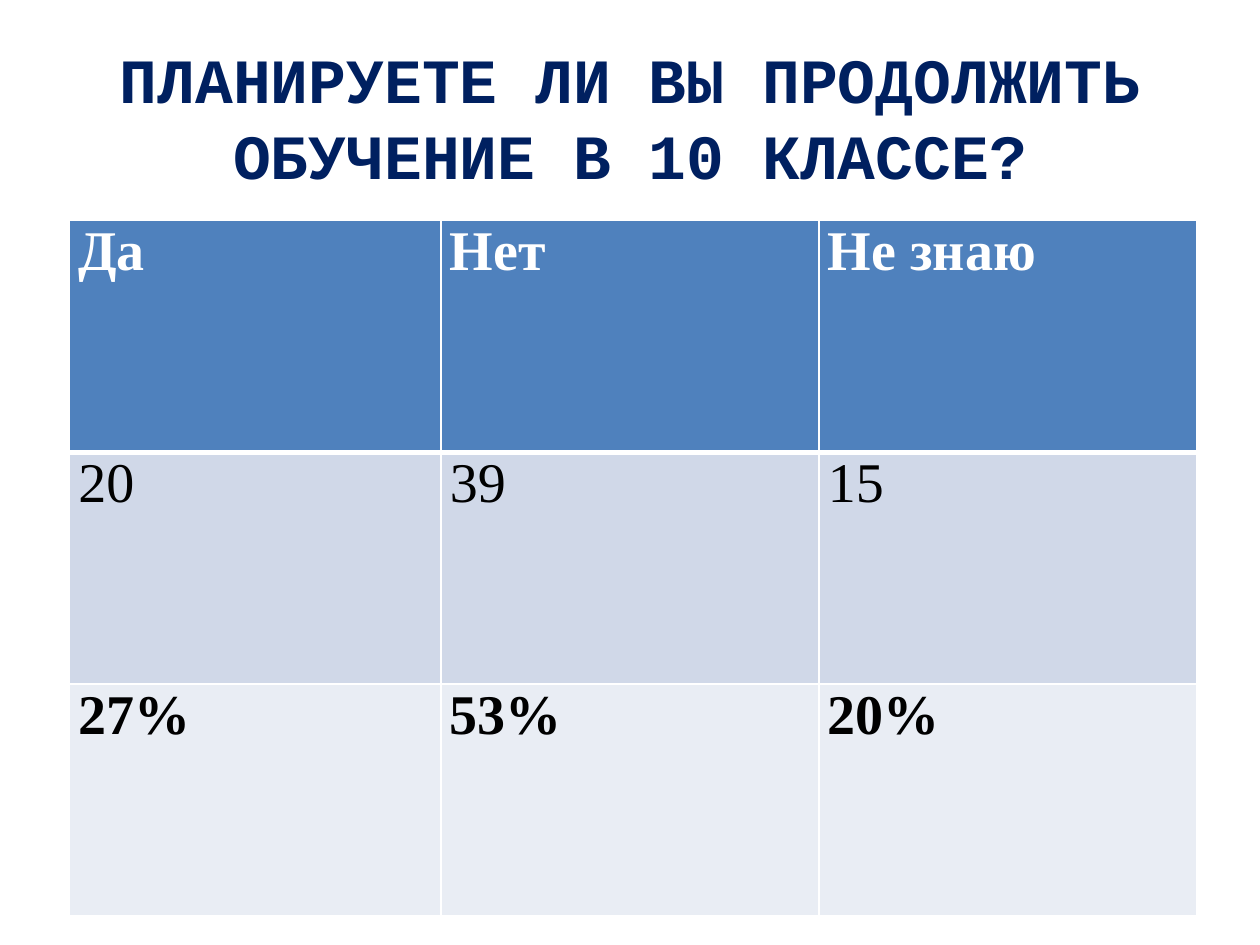
import pptx
import pptx.util
import pptx.dml.color
import pptx.enum.text
import pptx.oxml.ns
from lxml import etree

Cm, Pt = pptx.util.Cm, pptx.util.Pt
RGBColor = pptx.dml.color.RGBColor

NAVY = RGBColor(0x00, 0x20, 0x60)
WHITE = RGBColor(0xFF, 0xFF, 0xFF)
BLACK = RGBColor(0x00, 0x00, 0x00)
BLUE = RGBColor(0x4F, 0x81, 0xBD)
PALE_BLUE = RGBColor(0xD0, 0xD8, 0xE8)
PALEST_BLUE = RGBColor(0xE9, 0xED, 0xF4)

# Content
QUESTION = "ПЛАНИРУЕТЕ ЛИ ВЫ ПРОДОЛЖИТЬ ОБУЧЕНИЕ В 10 КЛАССЕ?"
# Each row: texts, fill, font colour, bold, top border and bottom border in points
ANSWERS = [
    (["Да", "Нет", "Не знаю"], BLUE, WHITE, True, 1, 3),
    (["20", "39", "15"], PALE_BLUE, BLACK, False, 3, 1),
    (["27%", "53%", "20%"], PALEST_BLUE, BLACK, True, 1, 1),
]
COLUMN_WIDTHS = [Cm(7.49), Cm(7.62), Cm(7.62)]
ROW_HEIGHT = Cm(4.67)


def add_border(cell, side, width):
    properties = cell._tc.get_or_add_tcPr()
    name = pptx.oxml.ns.qn("a:ln" + side)
    line = etree.SubElement(properties, name, w=str(Pt(width)))
    solid = etree.SubElement(line, pptx.oxml.ns.qn("a:solidFill"))
    etree.SubElement(solid, pptx.oxml.ns.qn("a:srgbClr"), val=str(WHITE))


deck = pptx.Presentation()
deck.slide_width, deck.slide_height = Cm(25.4), Cm(19.05)
page = deck.slides.add_slide(deck.slide_layouts[6])

# Title
box = page.shapes.add_textbox(Cm(1.27), Cm(0.76), Cm(22.86), Cm(3.18))
box.text_frame.word_wrap = True
box.text_frame.vertical_anchor = pptx.enum.text.MSO_ANCHOR.MIDDLE
para = box.text_frame.paragraphs[0]
para.text = QUESTION
para.alignment = pptx.enum.text.PP_ALIGN.CENTER
para.font.name, para.font.size, para.font.bold = "Courier New", Pt(36), True
para.font.color.rgb = NAVY

# Table of answers
table = page.shapes.add_table(
    len(ANSWERS), len(COLUMN_WIDTHS), Cm(1.4), Cm(4.45),
    sum(COLUMN_WIDTHS), ROW_HEIGHT * len(ANSWERS)).table
for column, width in zip(table.columns, COLUMN_WIDTHS):
    column.width = width

for row, (texts, fill, colour, bold, top, bottom) in zip(table.rows, ANSWERS):
    row.height = ROW_HEIGHT
    for cell, text in zip(row.cells, texts):
        cell.margin_left = cell.margin_right = Cm(0.18)
        cell.margin_top = cell.margin_bottom = 0
        for side, width in (("L", 1), ("R", 1), ("T", top), ("B", bottom)):
            add_border(cell, side, width)
        cell.fill.solid()
        cell.fill.fore_color.rgb = fill
        para = cell.text_frame.paragraphs[0]
        para.text = text
        para.font.name, para.font.size = "Times New Roman", Pt(32)
        para.font.bold = bold
        para.font.color.rgb = colour

deck.save("out.pptx")
